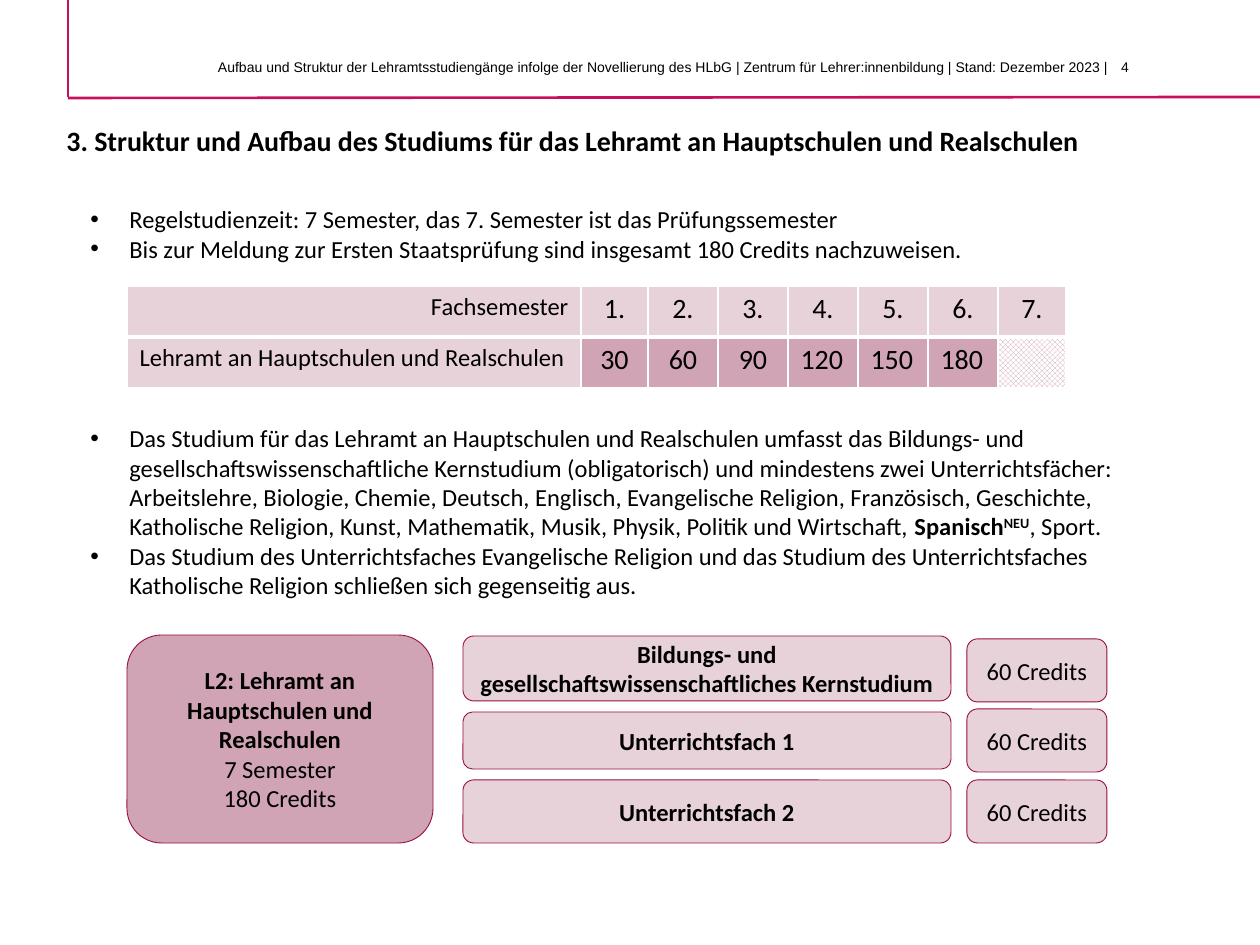
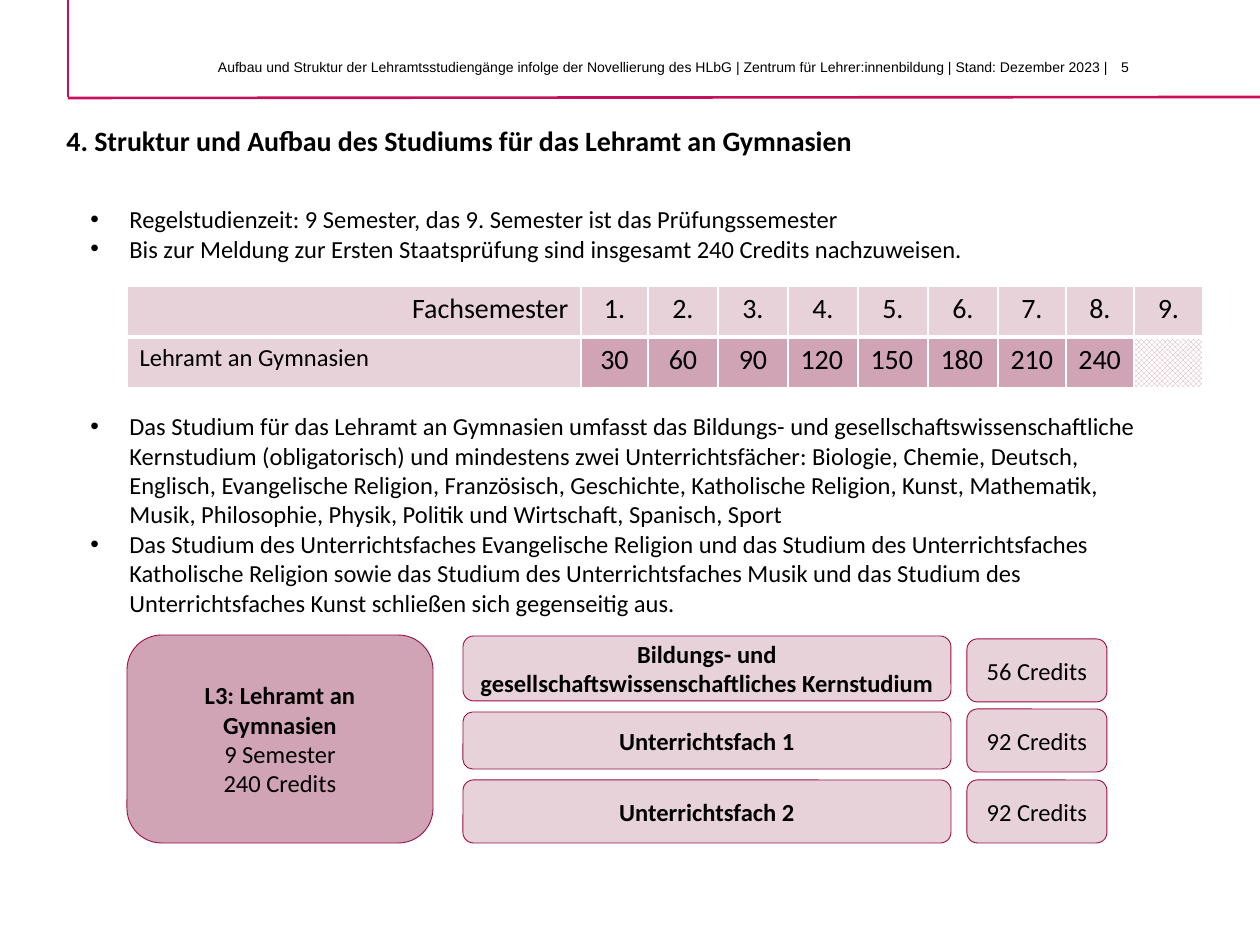
from lxml.etree import SubElement
from pptx import Presentation
from pptx.dml.color import RGBColor
from pptx.enum.dml import MSO_PATTERN
from pptx.enum.shapes import MSO_CONNECTOR, MSO_SHAPE
from pptx.enum.text import MSO_ANCHOR, PP_ALIGN
from pptx.oxml.ns import qn
from pptx.util import Pt

BLACK = RGBColor(0x00, 0x00, 0x00)
WHITE = RGBColor(0xFF, 0xFF, 0xFF)
PINK = RGBColor(0xC7, 0x10, 0x5C)
WINE = RGBColor(0x9A, 0x0C, 0x46)
ROSE = RGBColor(0xD0, 0xA4, 0xB4)
PALE = RGBColor(0xE8, 0xD2, 0xDA)

HEAD = ("Aufbau und Struktur der Lehramtsstudiengänge infolge der Novellierung des HLbG"
        " | Zentrum für Lehrer:innenbildung | Stand: Dezember 2023 |")
RULES = [(68, 0, 68, 97), (68, 98, 1260, 97)]
PARTS = [("Bildungs- und gesellschaftswissenschaftliches Kernstudium", 636, 65),
         ("Unterrichtsfach 1", 712, 57),
         ("Unterrichtsfach 2", 780, 63)]
WIDTHS = [454, 67, 70, 70, 70, 70, 70, 68, 68, 69]
STEP = 30

SLIDES = [
    {"page": 4, "title": "3. Struktur und Aufbau des Studiums für das Lehramt an Hauptschulen und Realschulen",
     "code": "L2", "name": "Lehramt an Hauptschulen und Realschulen",
     "terms": 7, "total": 180, "lead": 14, "top": 417, "high": 190,
     "notes": [
         [("Das Studium für das Lehramt an Hauptschulen und Realschulen umfasst das Bildungs- und "
           "gesellschaftswissenschaftliche Kernstudium (obligatorisch) und mindestens zwei "
           "Unterrichtsfächer: Arbeitslehre, Biologie, Chemie, Deutsch, Englisch, Evangelische "
           "Religion, Französisch, Geschichte, Katholische Religion, Kunst, Mathematik, Musik, "
           "Physik, Politik und Wirtschaft, ", ""),
          ("Spanisch", "bold"), ("NEU", "super"), (", Sport.", "")],
         [("Das Studium des Unterrichtsfaches Evangelische Religion und das Studium des "
           "Unterrichtsfaches Katholische Religion schließen sich gegenseitig aus.", "")]],
     "credits": [60, 60, 60]},
    {"page": 5, "title": "4. Struktur und Aufbau des Studiums für das Lehramt an Gymnasien",
     "code": "L3", "name": "Lehramt an Gymnasien",
     "terms": 9, "total": 240, "lead": 16, "top": 405, "high": 220,
     "notes": [
         [("Das Studium für das Lehramt an Gymnasien umfasst das Bildungs- und "
           "gesellschaftswissenschaftliche Kernstudium (obligatorisch) und mindestens zwei "
           "Unterrichtsfächer: Biologie, Chemie, Deutsch, Englisch, Evangelische Religion, "
           "Französisch, Geschichte, Katholische Religion, Kunst, Mathematik, Musik, Philosophie, "
           "Physik, Politik und Wirtschaft, Spanisch, Sport", "")],
         [("Das Studium des Unterrichtsfaches Evangelische Religion und das Studium des "
           "Unterrichtsfaches Katholische Religion sowie das Studium des Unterrichtsfaches Musik "
           "und das Studium des Unterrichtsfaches Kunst schließen sich gegenseitig aus.", "")]],
     "credits": [56, 92, 92]},
]


def px(n):
    return round(n * 914400 / 126)


def style(para, size, bold=False, face="Calibri", align=PP_ALIGN.LEFT):
    para.alignment = align
    font = para.font
    font.name, font.size, font.bold = face, Pt(size), bold
    font.color.rgb = BLACK


def lines(frame, count):
    return [frame.paragraphs[0]] + [frame.add_paragraph() for _ in range(count - 1)]


def text(slide, spot, words, size, **look):
    frame = slide.shapes.add_textbox(*map(px, spot)).text_frame
    frame.word_wrap = True
    frame.text = words
    style(frame.paragraphs[0], size, **look)
    return frame


def bullets(slide, spot, items):
    frame = slide.shapes.add_textbox(*map(px, spot)).text_frame
    frame.word_wrap = True
    for para, runs in zip(lines(frame, len(items)), items):
        props = para._p.get_or_add_pPr()
        props.set("marL", str(px(39)))
        props.set("indent", str(-px(39)))
        SubElement(props, qn("a:buFont")).set("typeface", "Arial")
        SubElement(props, qn("a:buChar")).set("char", "•")
        style(para, 14)
        for words, look in runs:
            run = para.add_run()
            run.text = words
            if look:
                run.font.bold = True
            if look == "super":
                run._r.get_or_add_rPr().set("baseline", "30000")


def box(slide, spot, fill, rows):
    shape = slide.shapes.add_shape(MSO_SHAPE.ROUNDED_RECTANGLE, *map(px, spot))
    shape.shadow.inherit = False
    shape.fill.solid()
    shape.fill.fore_color.rgb = fill
    shape.line.color.rgb = WINE
    shape.line.width = Pt(0.5)
    frame = shape.text_frame
    frame.word_wrap = True
    frame.vertical_anchor = MSO_ANCHOR.MIDDLE
    for para, (words, bold) in zip(lines(frame, len(rows)), rows):
        para.text = words
        style(para, 14, bold, align=PP_ALIGN.CENTER)


def border(cell, row):
    props = cell._tc.get_or_add_tcPr()
    thick = "B" if row == 0 else "T"
    for at, side in enumerate("LRTB"):
        edge = props.makeelement(qn("a:ln" + side), {"w": str(Pt(3 if side == thick else 1))})
        fill = SubElement(edge, qn("a:solidFill"))
        SubElement(fill, qn("a:srgbClr")).set("val", str(WHITE))
        props.insert(at, edge)


def plan(slide, data):
    terms = data["terms"]
    grid = [["Fachsemester"] + [f"{n}." for n in range(1, terms + 1)],
            [data["name"]] + [str(STEP * n) for n in range(1, terms)] + [""]]
    wide = WIDTHS[:terms + 1]
    table = slide.shapes.add_table(2, len(wide), *map(px, (127, 286, sum(wide), 102))).table
    table.first_row = table.horz_banding = False
    for col, width in zip(table.columns, wide):
        col.width = px(width)
    for r, row in enumerate(grid):
        for c, words in enumerate(row):
            cell = table.cell(r, c)
            if r and c == terms:
                cell.fill.patterned()
                cell.fill.pattern = MSO_PATTERN.TRELLIS
                cell.fill.fore_color.rgb = ROSE
                cell.fill.back_color.rgb = WHITE
            else:
                cell.fill.solid()
                cell.fill.fore_color.rgb = ROSE if r and c else PALE
            border(cell, r)
            cell.text = words
            if c == 0:
                size = 14 if r else data["lead"]
                align = PP_ALIGN.LEFT if r else PP_ALIGN.RIGHT
            else:
                size = 16
                align = PP_ALIGN.LEFT if len(words) > 2 else PP_ALIGN.CENTER
            style(cell.text_frame.paragraphs[0], size, align=align)


def frame_page(slide, page, title):
    for ends in RULES:
        rule = slide.shapes.add_connector(MSO_CONNECTOR.STRAIGHT, *map(px, ends))
        rule.line.color.rgb = PINK
        rule.line.width = Pt(1.5)
        SubElement(rule._element.spPr, qn("a:effectLst"))
    number = text(slide, (1096, 34, 67, 50), str(page), 8, face="Arial")
    number.margin_left, number.margin_top = px(25), px(25)
    text(slide, (165, 52, 957, 35), HEAD, 8, face="Arial", align=PP_ALIGN.RIGHT)
    text(slide, (54, 117, 1068, 47), title, 16, bold=True)


def build(slide, data):
    terms, total = data["terms"], data["total"]
    frame_page(slide, data["page"], data["title"])
    bullets(slide, (78, 198, 1077, 72), [
        [(f"Regelstudienzeit: {terms} Semester, das {terms}. Semester ist das Prüfungssemester", "")],
        [(f"Bis zur Meldung zur Ersten Staatsprüfung sind insgesamt {total} Credits nachzuweisen.", "")]])
    plan(slide, data)
    bullets(slide, (78, data["top"], 1077, data["high"]), data["notes"])
    box(slide, (127, 635, 306, 208), ROSE,
        [(f"{data['code']}: {data['name']}", True),
         (f"{terms} Semester", False), (f"{total} Credits", False)])
    for i, ((name, top, high), credit) in enumerate(zip(PARTS, data["credits"])):
        box(slide, (463, top, 488, high), PALE, [(name, True)])
        box(slide, (967, 639 + round(70.5 * i), 140, 63), PALE, [(f"{credit} Credits", False)])


def main():
    deck = Presentation()
    deck.slide_width, deck.slide_height = px(1260), px(945)
    for data in SLIDES:
        build(deck.slides.add_slide(deck.slide_layouts[6]), data)
    deck.save("out.pptx")


if __name__ == "__main__":
    main()
